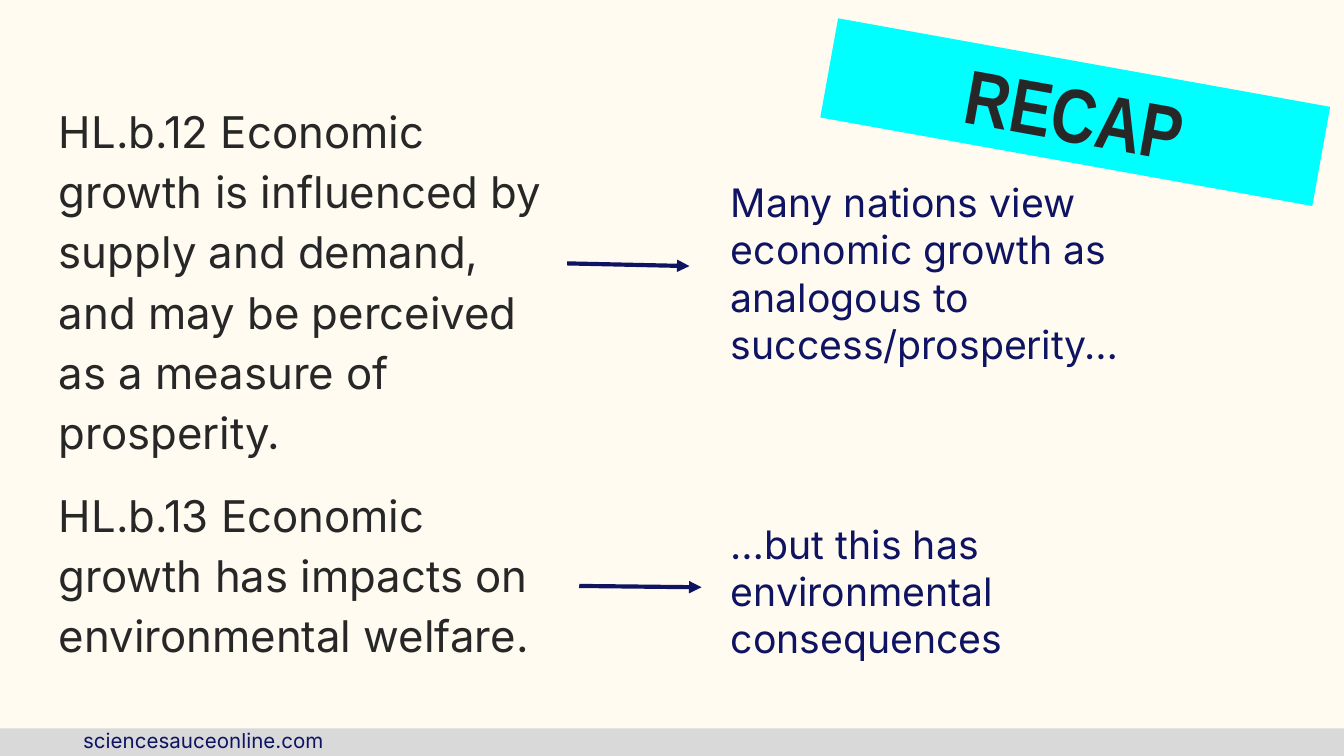
from pptx import Presentation
from pptx import util as u
from pptx.dml.color import RGBColor
from pptx.enum import shapes, text
from pptx.oxml.ns import qn
from lxml import etree

CREAM = RGBColor(0xFF, 0xFB, 0xF0)
GREY = RGBColor(0xD9, 0xD9, 0xD9)
NAVY = RGBColor(0x0E, 0x13, 0x62)
CHARCOAL = RGBColor(0x27, 0x27, 0x27)
CYAN = RGBColor(0x00, 0xFF, 0xFF)
BODY_FONT = "Inter"
BANNER_FONT = "Arial Narrow"
SLIDE_WIDTH = 10
SLIDE_HEIGHT = SLIDE_WIDTH * 9 / 16

STATEMENTS = [
    "HL.b.12 Economic growth is influenced by supply and demand, "
    "and may be perceived as a measure of prosperity.",
    "HL.b.13 Economic growth has impacts on environmental welfare.",
]
COMMENTS = [
    ("Many nations view economic growth as analogous to success/prosperity…",
     (5.34, 1.23, 4, 1.59)),
    ("…but this has environmental consequences", (5.34, 3.77, 4, 1.22)),
]
ARROWS = [((4.22, 1.96), (5.13, 1.98)), ((4.31, 4.36), (5.22, 4.37))]


def inches(values):
    """Convert a sequence of numbers to inch lengths."""
    return [u.Inches(value) for value in values]


def prepare_frame(shape, anchor=text.MSO_ANCHOR.TOP):
    """Set wrapping, anchor and even insets, and return the text frame."""
    frame = shape.text_frame
    frame.word_wrap = True
    frame.auto_size = text.MSO_AUTO_SIZE.NONE
    frame.vertical_anchor = anchor
    frame.margin_left = frame.margin_right = u.Inches(0.1)
    frame.margin_top = frame.margin_bottom = u.Inches(0.1)
    return frame


def add_run(paragraph, words, size, color, font=BODY_FONT, bold=False):
    """Add one styled run to a paragraph."""
    run = paragraph.add_run()
    run.text = words
    run.font.name = font
    run.font.size = u.Pt(size)
    run.font.bold = bold
    run.font.color.rgb = color


def add_rectangle(slide, box, color):
    """Add a plain filled rectangle."""
    shape = slide.shapes.add_shape(shapes.MSO_SHAPE.RECTANGLE, *inches(box))
    shape.shadow.inherit = False
    shape.fill.solid()
    shape.fill.fore_color.rgb = color
    shape.line.fill.background()
    return shape


def add_text(slide, box, words, size):
    """Add a navy text box with a single paragraph."""
    frame = prepare_frame(slide.shapes.add_textbox(*inches(box)))
    add_run(frame.paragraphs[0], words, size, NAVY)


def add_footer(slide, box):
    """Add the grey footer strip with the site address."""
    left, top, width, height = box
    add_rectangle(slide, box, GREY)
    add_text(slide, (left + 0.52, top - 0.09, 3.34, 0.18),
             "sciencesauceonline.com", 11)


def add_statements(slide, box):
    """Add the syllabus statements as spaced paragraphs."""
    frame = prepare_frame(slide.shapes.add_textbox(*inches(box)))
    for index, statement in enumerate(STATEMENTS):
        paragraph = frame.add_paragraph() if index else frame.paragraphs[0]
        paragraph.line_spacing = 1.15
        if index:
            paragraph.space_before = u.Pt(12)
        add_run(paragraph, statement, 23.4, CHARCOAL)


def add_arrow(slide, start, end):
    """Add a navy arrow between two points."""
    connector = slide.shapes.add_connector(
        shapes.MSO_CONNECTOR.STRAIGHT, *inches(start + end))
    connector.line.color.rgb = NAVY
    connector.line.width = u.Pt(2.25)
    line = connector._element.spPr.find(qn("a:ln"))
    etree.SubElement(line, qn("a:tailEnd"), type="triangle")
    etree.SubElement(connector._element.spPr, qn("a:effectLst"))


def add_banner(slide, box):
    """Add the tilted recap banner."""
    banner = add_rectangle(slide, box, CYAN)
    banner.rotation = 10.2
    frame = prepare_frame(banner, text.MSO_ANCHOR.MIDDLE)
    paragraph = frame.paragraphs[0]
    paragraph.alignment = text.PP_ALIGN.CENTER
    add_run(paragraph, "RECAP", 41, CHARCOAL, BANNER_FONT, True)


def main():
    """Build and save the recap slide."""
    presentation = Presentation()
    presentation.slide_width = u.Inches(SLIDE_WIDTH)
    presentation.slide_height = u.Inches(SLIDE_HEIGHT)
    slide = presentation.slides.add_slide(presentation.slide_layouts[6])
    slide.background.fill.solid()
    slide.background.fill.fore_color.rgb = CREAM
    add_footer(slide, (0, 5.42, SLIDE_WIDTH, 0.21))
    add_statements(slide, (0.34, 0.62, 3.85, 4.6))
    for words, box in COMMENTS:
        add_text(slide, box, words, 21)
    for start, end in ARROWS:
        add_arrow(slide, start, end)
    add_banner(slide, (6.14, 0.46, 3.72, 0.75))
    presentation.save("out.pptx")


if __name__ == "__main__":
    main()
